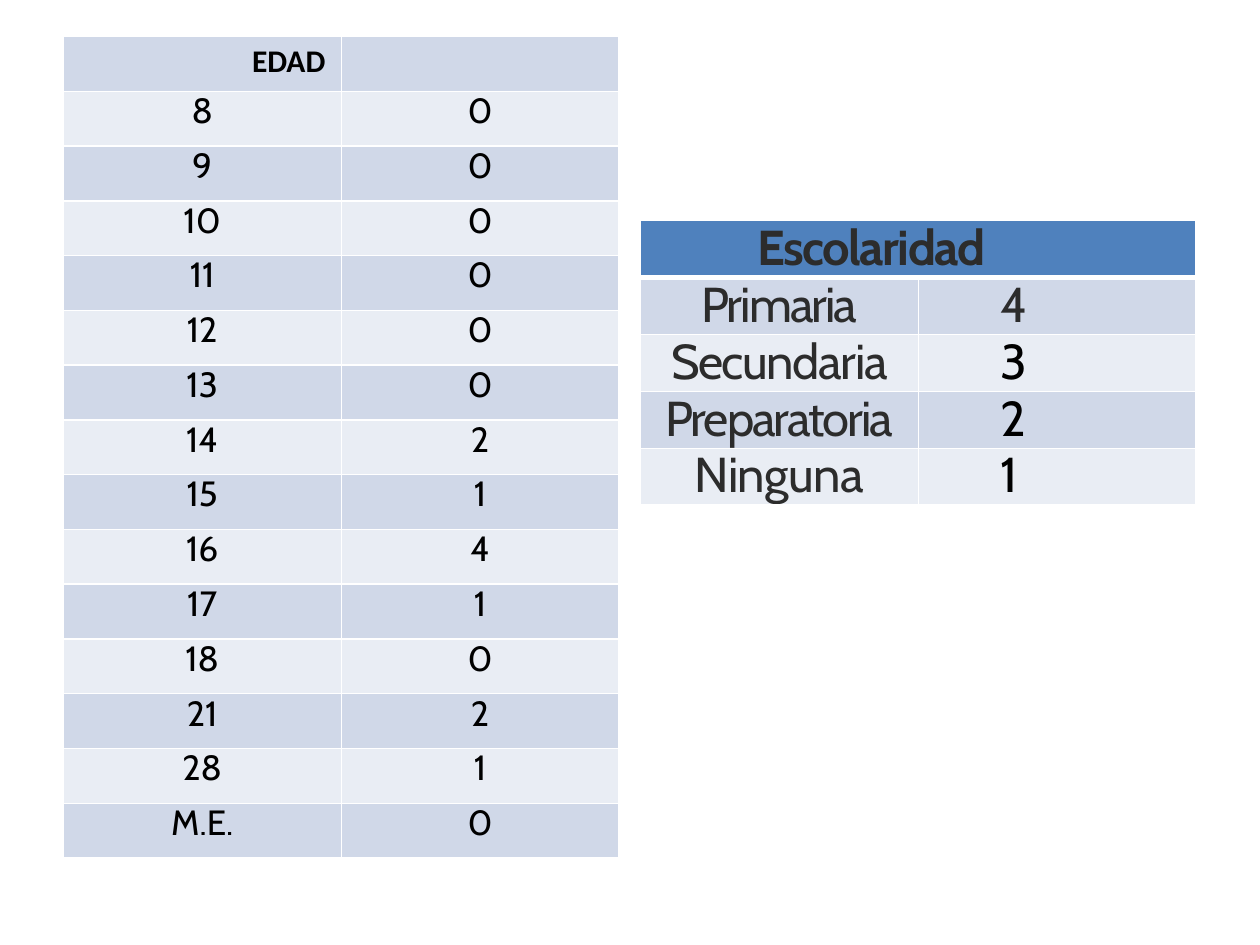
from lxml.etree import SubElement
from pptx import Presentation
from pptx.dml.color import RGBColor
from pptx.enum.text import PP_ALIGN as Align
from pptx.oxml.ns import qn
from pptx.util import Inches, Pt

BLACK = RGBColor(0x00, 0x00, 0x00)
CHARCOAL = RGBColor(0x2C, 0x2C, 0x2C)
WHITE = RGBColor(0xFF, 0xFF, 0xFF)
BLUE = RGBColor(0x4F, 0x81, 0xBD)
BAND_DARK = RGBColor(0xD0, 0xD8, 0xE8)
BAND_LIGHT = RGBColor(0xE9, 0xED, 0xF4)

AGES = [("8", "0"), ("9", "0"), ("10", "0"), ("11", "0"), ("12", "0"),
        ("13", "0"), ("14", "2"), ("15", "1"), ("16", "4"), ("17", "1"),
        ("18", "0"), ("21", "2"), ("28", "1"), ("M.E.", "0")]

# Level, letter spacing of its name, count, colour of the count
SCHOOLING = [("Primaria", -1.1, "4", CHARCOAL), ("Secundaria", -0.8, "3", BLACK),
             ("Preparatoria", -1.1, "2", BLACK), ("Ninguna", -0.3, "1", BLACK)]


def write(cell, text, font="Cabin", size=20, color=BLACK, bold=False,
          align=Align.LEFT, indent=0, leading=None, spacing=0, margin=0):
    """Put one formatted line of text in a table cell."""
    if margin is not None:
        cell.margin_left = cell.margin_right = Inches(margin)
        cell.margin_top = cell.margin_bottom = Inches(margin)
    para = cell.text_frame.paragraphs[0]
    para.alignment = align
    if leading:
        para.line_spacing = Pt(leading)
    if indent:
        properties = para._p.get_or_add_pPr()
        properties.set("marL", str(Inches(indent)))
        properties.set("indent", "0")
    span = para.add_run()
    span.text = text
    span.font.name, span.font.size, span.font.bold = font, Pt(size), bold
    span.font.color.rgb = color
    if spacing:
        span._r.get_or_add_rPr().set("spc", str(round(spacing * 100)))


class TablePage:
    """Holds the table style and the current slide."""

    border_color = WHITE
    border_width = 1

    def __init__(self, deck):
        self.page = deck.slides.add_slide(deck.slide_layouts[6])

    def table(self, left, top, widths, row_height, fills):
        rows = len(fills)
        table = self.page.shapes.add_table(
            rows, len(widths), Inches(left), Inches(top),
            Inches(sum(widths)), Inches(row_height * rows)).table
        for column, width in zip(table.columns, widths):
            column.width = Inches(width)
        for row, fill in zip(table.rows, fills):
            row.height = Inches(row_height)
            for cell in row.cells:
                self.borders(cell)
                cell.fill.solid()
                cell.fill.fore_color.rgb = fill
        return table

    def borders(self, cell, **widths):
        """Draw the four sides; a keyword such as B=3 changes one width."""
        properties = cell._tc.get_or_add_tcPr()
        for place, side in enumerate("LRTB"):
            tag = qn(f"a:ln{side}")
            for old in properties.findall(tag):
                properties.remove(old)
            width = Pt(widths.get(side, self.border_width))
            line = SubElement(properties, tag, w=str(width))
            solid = SubElement(line, qn("a:solidFill"))
            SubElement(solid, qn("a:srgbClr"), val=str(self.border_color))
            properties.insert(place, line)


def bands(count, first, second):
    return [second if index % 2 else first for index in range(count)]


def main():
    deck = Presentation()
    deck.slide_width, deck.slide_height = Inches(10), Inches(7.5)
    sheet = TablePage(deck)

    # Ages
    ages = sheet.table(0.5, 0.29, [2.21, 2.2], 0.435,
                       bands(len(AGES) + 1, BAND_DARK, BAND_LIGHT))
    write(ages.cell(0, 0), "EDAD", font="Calibri", size=18, bold=True,
          indent=1.4, margin=None)
    for row, values in enumerate(AGES, start=1):
        for column, value in enumerate(values):
            write(ages.cell(row, column), value, align=Align.CENTER, leading=23.5)

    # Schooling
    schooling = sheet.table(5.08, 1.75, [2.21, 2.2], 0.45,
                            [BLUE] + bands(len(SCHOOLING), BAND_DARK, BAND_LIGHT))
    for column in range(2):
        sheet.borders(schooling.cell(0, column), B=3)
        sheet.borders(schooling.cell(1, column), T=3)
    heading = schooling.cell(0, 0)
    heading.merge(schooling.cell(0, 1))
    style = {"size": 28, "leading": 32.5}
    write(heading, "Escolaridad", color=CHARCOAL, bold=True, indent=0.93,
          spacing=-0.9, **style)
    for row, (level, spacing, count, color) in enumerate(SCHOOLING, start=1):
        write(schooling.cell(row, 0), level, color=CHARCOAL, align=Align.CENTER,
              spacing=spacing, **style)
        write(schooling.cell(row, 1), count, color=color, indent=0.65, **style)

    deck.save("out.pptx")


if __name__ == "__main__":
    main()
